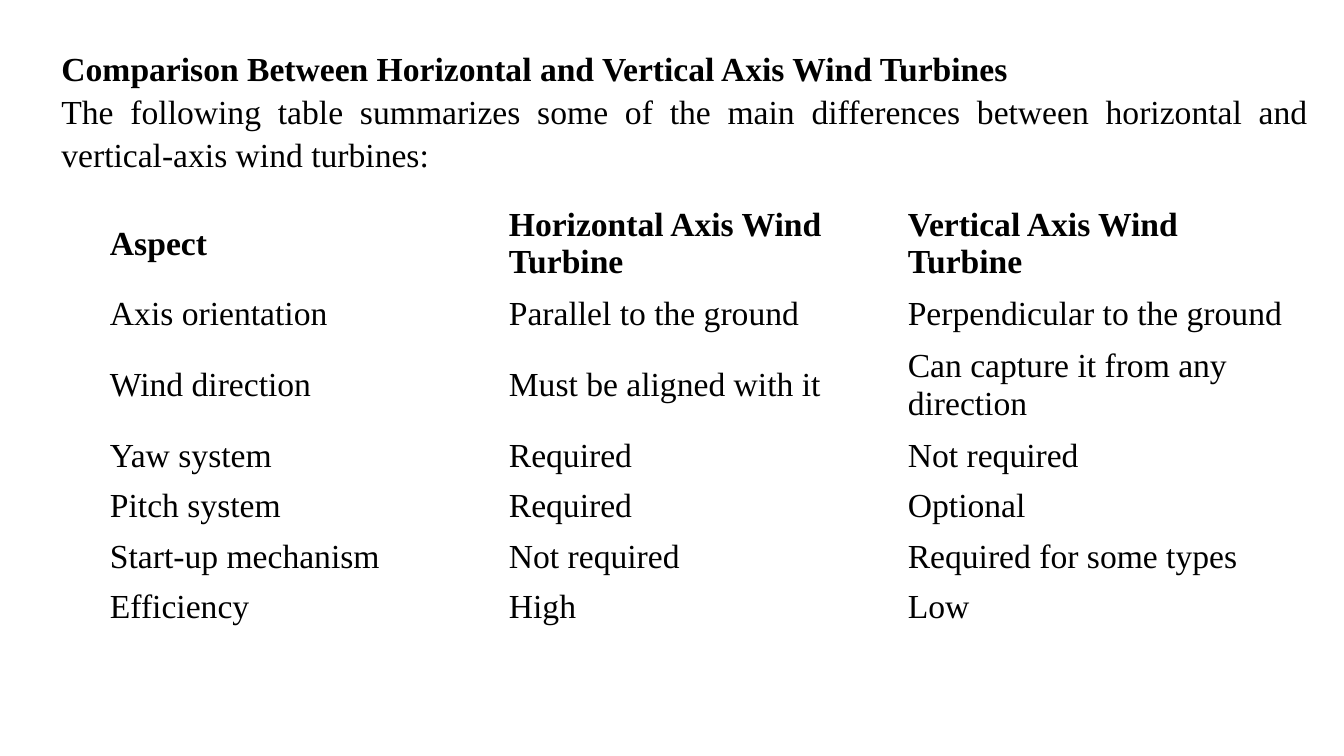
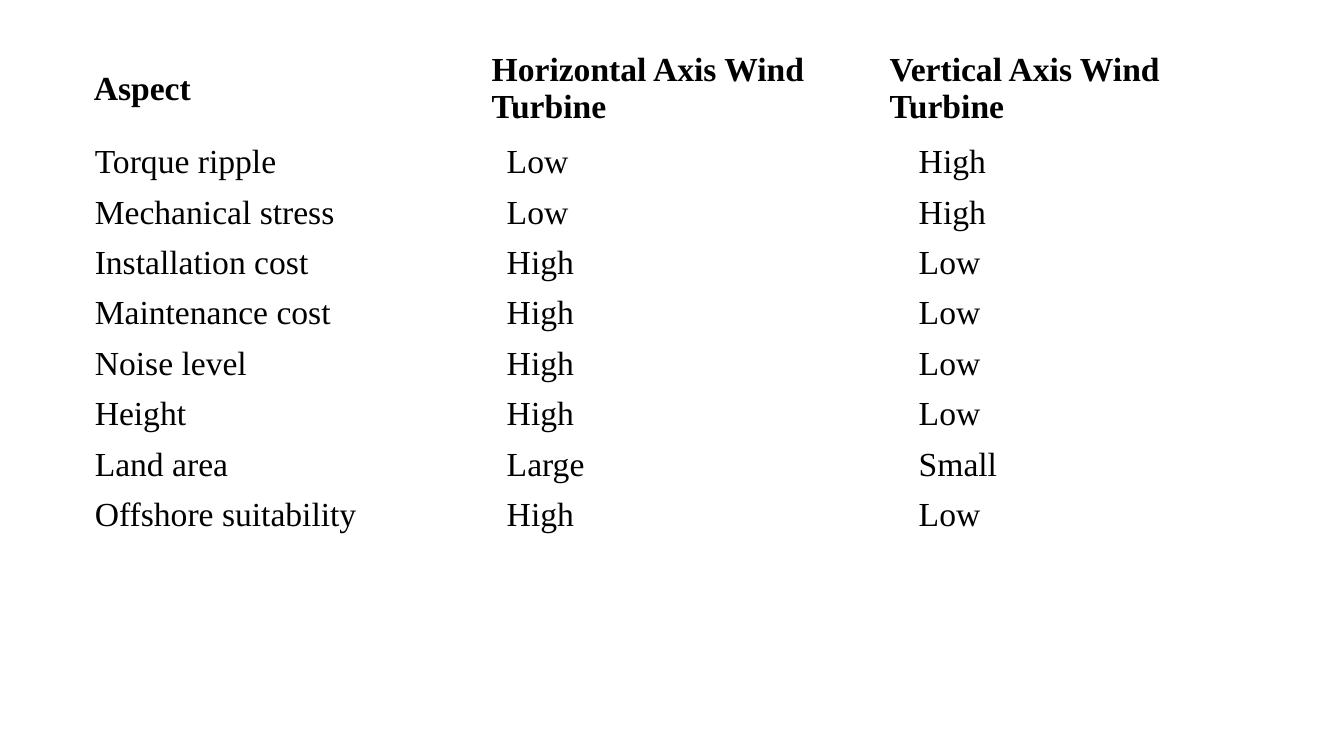
from dataclasses import dataclass
from typing import Any

from lxml.etree import SubElement
from pptx import Presentation
from pptx.dml.color import RGBColor
from pptx.enum.text import MSO_ANCHOR, MSO_AUTO_SIZE, PP_ALIGN
from pptx.oxml.ns import qn
from pptx.util import Inches, Pt

WIDE, HIGH = 13.33, 7.5
INK, PAPER = "000000", "FFFFFF"
FACE = {"name": "Times New Roman", "size": Pt(24)}
PLAIN = {"first_row": False, "horz_banding": False}
FRAME = {"word_wrap": True, "auto_size": MSO_AUTO_SIZE.SHAPE_TO_FIT_TEXT}
PROSE = {"alignment": PP_ALIGN.JUSTIFY, "line_spacing": 1.07}
ONE, TWO = 6.67, 12
HEAD = ("Aspect", "Horizontal Axis Wind Turbine", "Vertical Axis Wind Turbine")


@dataclass(frozen=True)
class Line:
    text: str
    bold: bool = False


@dataclass(frozen=True)
class Row:
    cells: tuple[str, str, str]
    tall: float = ONE
    bold: bool = False


@dataclass(frozen=True)
class Grid:
    left: float
    top: float
    width: float
    rows: tuple[Row, ...]


@dataclass(frozen=True)
class Box:
    left: float
    top: float
    width: float
    height: float
    lines: tuple[Line, ...]


TITLE = Row(HEAD, TWO, True)
INTRO = Box(3.83, 5.33, 94.22, 17.47, (
    Line("Comparison Between Horizontal and Vertical Axis Wind Turbines", True),
    Line("The following table summarizes some of the main differences between "
         "horizontal and vertical-axis wind turbines:"),
))
DESIGN = Grid(7.43, 26.27, 89.05, (
    TITLE,
    Row(("Axis orientation", "Parallel to the ground", "Perpendicular to the ground")),
    Row(("Wind direction", "Must be aligned with it",
         "Can capture it from any direction"), TWO),
    Row(("Yaw system", "Required", "Not required")),
    Row(("Pitch system", "Required", "Optional")),
    Row(("Start-up mechanism", "Not required", "Required for some types")),
    Row(("Efficiency", "High", "Low")),
))
TOP = Grid(6.23, 5.73, 88.82, (TITLE,))
RATING = Grid(6.3, 18.13, 91.97, (
    Row(("Torque ripple", "Low", "High")),
    Row(("Mechanical stress", "Low", "High")),
    Row(("Installation cost", "High", "Low")),
    Row(("Maintenance cost", "High", "Low")),
    Row(("Noise level", "High", "Low")),
    Row(("Height", "High", "Low")),
    Row(("Land area", "Large", "Small")),
    Row(("Offshore suitability", "High", "Low")),
))
PAGES = ((INTRO, DESIGN), (TOP, RATING))


def across(share: float) -> int:
    return Inches(WIDE * share / 100)


def down(share: float) -> int:
    return Inches(HIGH * share / 100)


def tint(color: Any, code: str) -> None:
    color.rgb = RGBColor.from_string(code)


def apply(target: Any, values: dict[str, Any]) -> None:
    for name, value in values.items():
        setattr(target, name, value)


def write(para: Any, text: str, bold: bool) -> None:
    run = para.add_run()
    run.text = text
    apply(run.font, {**FACE, "bold": bold})
    tint(run.font.color, INK)


def border(cell: Any) -> None:
    props = cell._tc.get_or_add_tcPr()
    for side in ("a:lnL", "a:lnR", "a:lnT", "a:lnB"):
        edge = SubElement(props, qn(side), w=str(Pt(0.75)))
        fill = SubElement(edge, qn("a:solidFill"))
        SubElement(fill, qn("a:srgbClr"), val=PAPER)


def draw_box(slide: Any, box: Box) -> None:
    shape = slide.shapes.add_textbox(
        across(box.left), down(box.top), across(box.width), down(box.height))
    frame = shape.text_frame
    apply(frame, FRAME)
    for index, line in enumerate(box.lines):
        para = frame.add_paragraph() if index else frame.paragraphs[0]
        apply(para, PROSE)
        write(para, line.text, line.bold)


def draw_grid(slide: Any, grid: Grid) -> None:
    total = sum(row.tall for row in grid.rows)
    table = slide.shapes.add_table(
        len(grid.rows), len(HEAD), across(grid.left), down(grid.top),
        across(grid.width), down(total)).table
    apply(table, PLAIN)
    for index, row in enumerate(grid.rows):
        table.rows[index].height = down(row.tall)
        for col, text in enumerate(row.cells):
            cell = table.cell(index, col)
            border(cell)
            cell.fill.solid()
            tint(cell.fill.fore_color, PAPER)
            cell.vertical_anchor = MSO_ANCHOR.MIDDLE
            write(cell.text_frame.paragraphs[0], text, row.bold)


def main() -> None:
    deck = Presentation()
    apply(deck, {"slide_width": Inches(WIDE), "slide_height": Inches(HIGH)})
    for page in PAGES:
        slide = deck.slides.add_slide(deck.slide_layouts[6])
        for item in page:
            if isinstance(item, Box):
                draw_box(slide, item)
            else:
                draw_grid(slide, item)
    deck.save("out.pptx")


if __name__ == "__main__":
    main()
